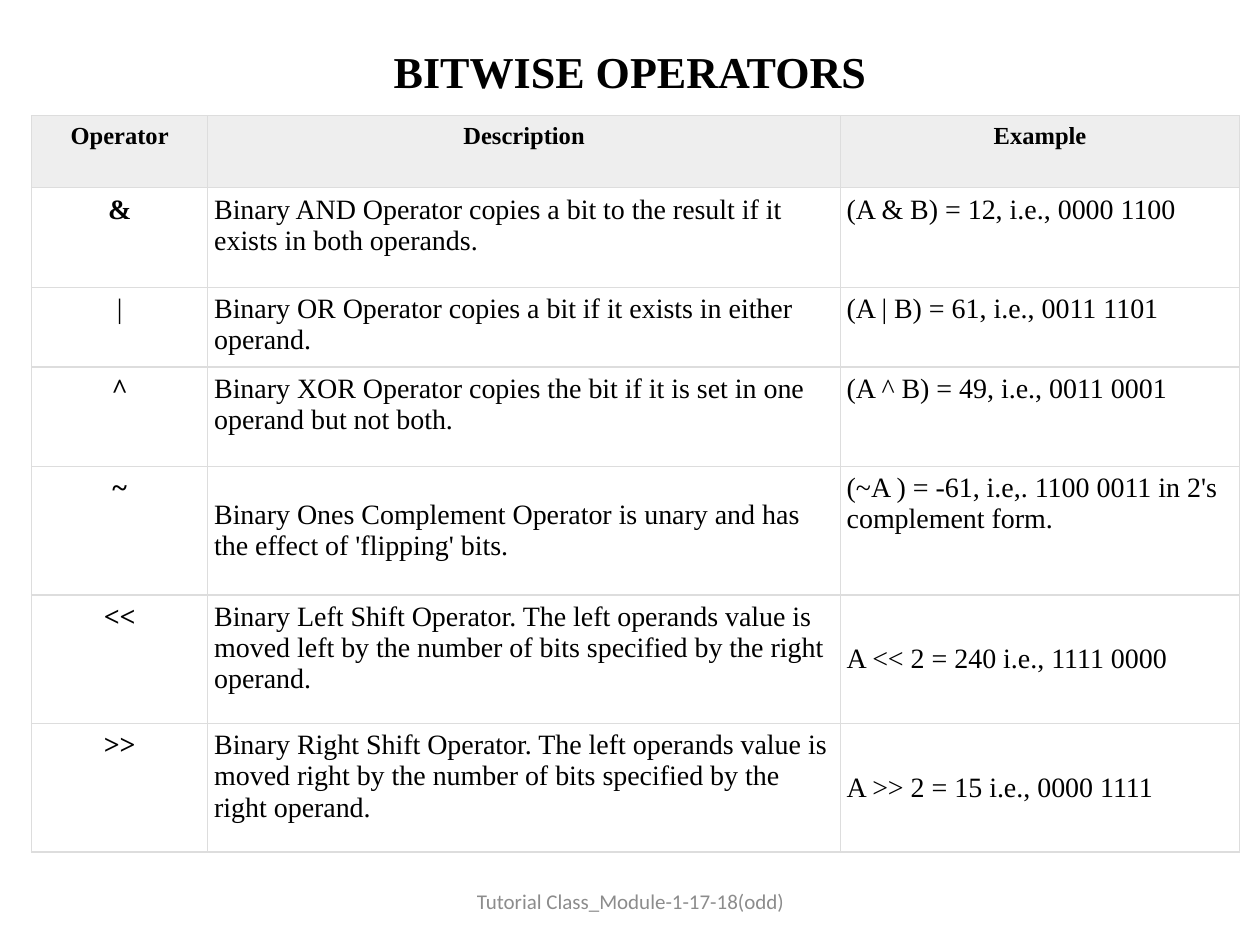
from dataclasses import dataclass

from lxml import etree
from pptx import Presentation
from pptx.dml.color import RGBColor
from pptx.enum.text import MSO_ANCHOR, PP_ALIGN
from pptx.oxml.ns import qn
from pptx.util import Inches, Pt

CENTER, LEFT = PP_ALIGN.CENTER, PP_ALIGN.LEFT
TOP, MIDDLE = MSO_ANCHOR.TOP, MSO_ANCHOR.MIDDLE


@dataclass(frozen=True)
class Theme:
    serif: str = "Times New Roman"
    sans: str = "Calibri"
    ink: str = "000000"
    muted: str = "8C8C8C"
    header: str = "EEEEEE"
    border: str = "DDDDDD"
    border_width: float = 0.75
    title_size: float = 25.2
    header_size: float = 14
    body_size: float = 16
    footer_size: float = 12


theme = Theme()


def write(frame, text, size, align, bold=False, font=theme.serif, color=theme.ink):
    frame.text = text
    frame.word_wrap = True
    para = frame.paragraphs[0]
    para.alignment = align
    span = para.runs[0]
    span.font.name = font
    span.font.size = Pt(size)
    span.font.bold = bold
    span.font.color.rgb = RGBColor.from_string(color)


def add_borders(cell):
    properties = cell._tc.get_or_add_tcPr()
    for side in ("lnL", "lnR", "lnT", "lnB"):
        line = etree.SubElement(properties, qn(f"a:{side}"), w=str(Pt(theme.border_width)))
        fill = etree.SubElement(line, qn("a:solidFill"))
        etree.SubElement(fill, qn("a:srgbClr"), val=theme.border)


deck = Presentation()
deck.slide_width, deck.slide_height = Inches(10), Inches(7.5)
page = deck.slides.add_slide(deck.slide_layouts[6])

title = page.shapes.add_textbox(Inches(0.5), Inches(0.3), Inches(9), Inches(0.53))
title.text_frame.vertical_anchor = MIDDLE
write(title.text_frame, "BITWISE OPERATORS", theme.title_size, CENTER, bold=True)

rows = [
    ("Operator", "Description", "Example"),
    ("&", "Binary AND Operator copies a bit to the result if it exists in both operands.",
     "(A & B) = 12, i.e., 0000 1100"),
    ("|", "Binary OR Operator copies a bit if it exists in either operand.",
     "(A | B) = 61, i.e., 0011 1101"),
    ("^", "Binary XOR Operator copies the bit if it is set in one operand but not both.",
     "(A ^ B) = 49, i.e., 0011 0001"),
    ("~", "Binary Ones Complement Operator is unary and has the effect of 'flipping' bits.",
     "(~A ) = -61, i.e,. 1100 0011 in 2's complement form."),
    ("<<", "Binary Left Shift Operator. The left operands value is moved left by the number "
     "of bits specified by the right operand.", "A << 2 = 240 i.e., 1111 0000"),
    (">>", "Binary Right Shift Operator. The left operands value is moved right by the number "
     "of bits specified by the right operand.", "A >> 2 = 15 i.e., 0000 1111"),
]
column_widths = [1.4, 5.02, 3.17]
row_heights = [0.57, 0.79, 0.57, 0.79, 1.02, 1.02, 1.02]
middle_cells = {(4, 1), (5, 2), (6, 2)}

table = page.shapes.add_table(
    len(rows), len(column_widths), Inches(0.25), Inches(0.92),
    Inches(sum(column_widths)), Inches(sum(row_heights))).table
table.first_row = table.horz_banding = False
for column, width in zip(table.columns, column_widths):
    column.width = Inches(width)

for r, (texts, height) in enumerate(zip(rows, row_heights)):
    table.rows[r].height = Inches(height)
    for c, text in enumerate(texts):
        cell = table.cell(r, c)
        is_header = r == 0
        cell.margin_left = cell.margin_right = Inches(0.05)
        cell.margin_top = cell.margin_bottom = Inches(0.05)
        cell.vertical_anchor = MIDDLE if (r, c) in middle_cells else TOP
        add_borders(cell)
        if is_header:
            cell.fill.solid()
            cell.fill.fore_color.rgb = RGBColor.from_string(theme.header)
        else:
            cell.fill.background()
        write(cell.text_frame, text,
              theme.header_size if is_header else theme.body_size,
              CENTER if is_header or c == 0 else LEFT,
              bold=is_header or (c == 0 and text != "|"))

footer = page.shapes.add_textbox(Inches(3.42), Inches(6.95), Inches(3.17), Inches(0.4))
footer.text_frame.vertical_anchor = MIDDLE
write(footer.text_frame, "Tutorial Class_Module-1-17-18(odd)", theme.footer_size, CENTER,
      font=theme.sans, color=theme.muted)

deck.save("out.pptx")
